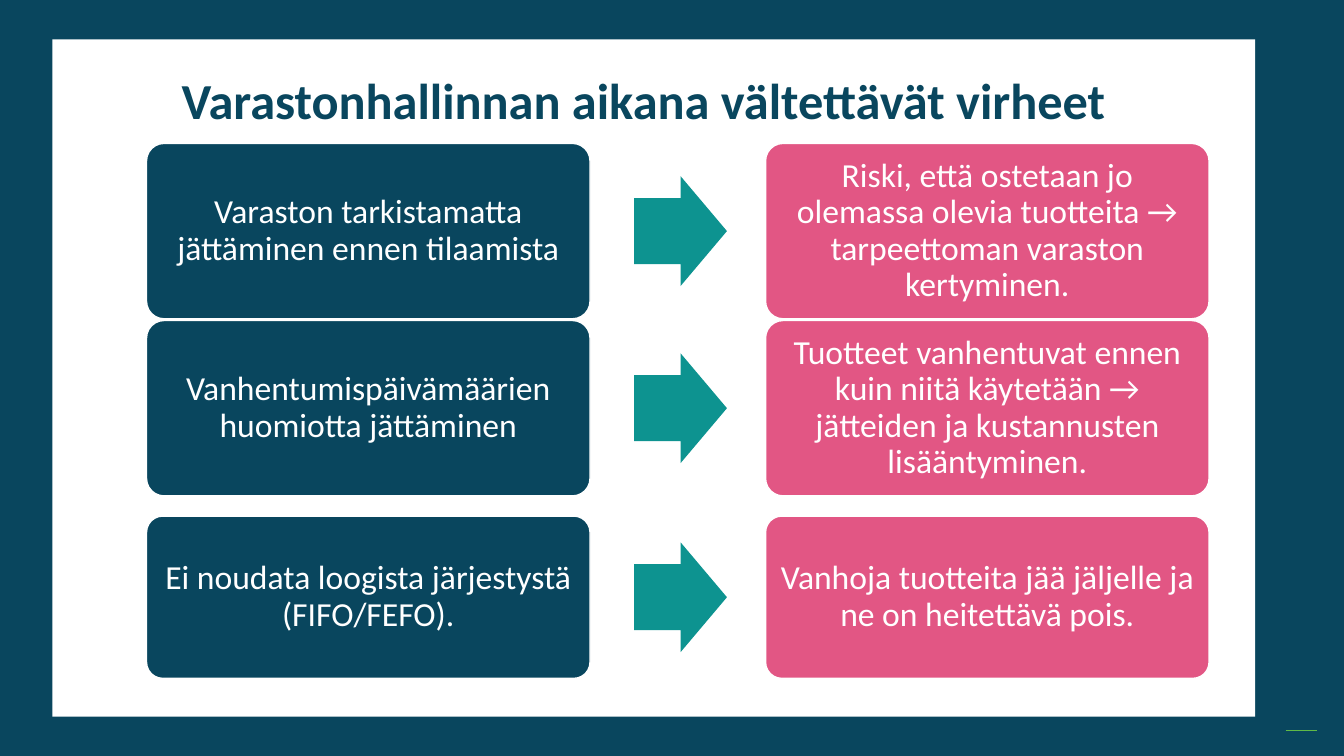
from dataclasses import dataclass

from lxml.etree import SubElement
from pptx import Presentation
from pptx.dml.color import RGBColor
from pptx.enum.shapes import MSO_CONNECTOR, MSO_SHAPE as Preset
from pptx.enum.text import MSO_ANCHOR as Anchor, PP_ALIGN as Align
from pptx.oxml.ns import qn
from pptx.shapes.autoshape import Shape
from pptx.slide import Slide
from pptx.text.text import TextFrame
from pptx.util import Inches, Length, Pt


@dataclass(frozen=True)
class Theme:
    navy: str = "09465E"
    pink: str = "E25684"
    teal: str = "0D9390"
    green: str = "60BA47"
    white: str = "FFFFFF"
    font: str = "Calibri"
    title_size: int = 36
    card_size: int = 24


@dataclass(frozen=True)
class Area:
    """A rectangle in percent of the slide's width and height."""
    left: float
    top: float
    width: float
    height: float

    def lengths(self) -> tuple[Length, Length, Length, Length]:
        return across(self.left), down(self.top), across(self.width), down(self.height)


@dataclass(frozen=True)
class MistakeRow:
    top: float
    height: float
    mistake: str
    consequence: str


THEME = Theme()
SLIDE_WIDTH, SLIDE_HEIGHT = Inches(13.33), Inches(7.5)
MISTAKE_LEFT, ARROW_LEFT, CONSEQUENCE_LEFT = 10.9, 47.19, 56.96
CARD_WIDTH, ARROW_WIDTH, ARROW_HEIGHT = 33, 6.9, 14.53

TITLE = "Varastonhallinnan aikana vältettävät virheet"
ROWS = (
    MistakeRow(18.97, 23.2, "Varaston tarkistamatta jättäminen ennen tilaamista",
               "Riski, että ostetaan jo olemassa olevia tuotteita → "
               "tarpeettoman varaston kertyminen."),
    MistakeRow(42.4, 23.2, "Vanhentumispäivämäärien huomiotta jättäminen",
               "Tuotteet vanhentuvat ennen kuin niitä käytetään → "
               "jätteiden ja kustannusten lisääntyminen."),
    MistakeRow(68.27, 21.47, "Ei noudata loogista järjestystä (FIFO/FEFO).",
               "Vanhoja tuotteita jää jäljelle ja ne on heitettävä pois."),
)


def across(percent: float) -> Length:
    return Length(round(SLIDE_WIDTH * percent / 100))


def down(percent: float) -> Length:
    return Length(round(SLIDE_HEIGHT * percent / 100))


def color(value: str) -> RGBColor:
    return RGBColor.from_string(value)


def add_block(slide: Slide, preset: Preset, area: Area, fill: str) -> Shape:
    """Add a filled preset shape without outline or shadow."""
    shape = slide.shapes.add_shape(preset, *area.lengths())
    shape.shadow.inherit = False
    shape.fill.solid()
    shape.fill.fore_color.rgb = color(fill)
    shape.line.fill.background()
    return shape


def write(frame: TextFrame, text: str, size: int, ink: str, bold: bool = False) -> None:
    frame.word_wrap = True
    paragraph = frame.paragraphs[0]
    paragraph.alignment = Align.CENTER
    paragraph.line_spacing = 0.9
    run = paragraph.add_run()
    run.text = text
    run.font.name = THEME.font
    run.font.size = Pt(size)
    run.font.bold = bold
    run.font.color.rgb = color(ink)


def add_card(slide: Slide, area: Area, fill: str, text: str) -> None:
    card = add_block(slide, Preset.ROUNDED_RECTANGLE, area, fill)
    card.adjustments[0] = 0.1
    card.line.color.rgb = color(THEME.white)
    card.line.width = Pt(1)
    frame = card.text_frame
    frame.vertical_anchor = Anchor.MIDDLE
    frame.margin_left = frame.margin_right = Inches(0.1)
    frame.margin_top = frame.margin_bottom = Inches(0.1)
    write(frame, text, THEME.card_size, THEME.white)


def add_row(slide: Slide, row: MistakeRow) -> None:
    add_card(slide, Area(MISTAKE_LEFT, row.top, CARD_WIDTH, row.height),
             THEME.navy, row.mistake)
    arrow_top = row.top + (row.height - ARROW_HEIGHT) / 2
    arrow = add_block(slide, Preset.RIGHT_ARROW,
                      Area(ARROW_LEFT, arrow_top, ARROW_WIDTH, ARROW_HEIGHT), THEME.teal)
    arrow.adjustments[0] = 0.6
    arrow.adjustments[1] = 0.5
    add_card(slide, Area(CONSEQUENCE_LEFT, row.top, CARD_WIDTH, row.height),
             THEME.pink, row.consequence)


def add_frame(slide: Slide) -> None:
    """Add the navy border, the white panel and the green corner line."""
    add_block(slide, Preset.RECTANGLE, Area(0, 0, 100, 100), THEME.navy)
    add_block(slide, Preset.RECTANGLE, Area(3.9, 5.2, 89.5, 89.6), THEME.white)
    corner_line = slide.shapes.add_connector(
        MSO_CONNECTOR.STRAIGHT, across(95.65), down(96.67), across(97.97), down(96.67))
    corner_line.line.color.rgb = color(THEME.green)
    corner_line.line.width = Pt(1)
    SubElement(corner_line.element.spPr, qn("a:effectLst"))


def main() -> None:
    presentation = Presentation()
    presentation.slide_width, presentation.slide_height = SLIDE_WIDTH, SLIDE_HEIGHT
    slide = presentation.slides.add_slide(presentation.slide_layouts[6])
    add_frame(slide)
    title = slide.shapes.add_textbox(*Area(6.68, 9.33, 82.45, 11.73).lengths())
    write(title.text_frame, TITLE, THEME.title_size, THEME.navy, bold=True)
    for row in ROWS:
        add_row(slide, row)
    presentation.save("out.pptx")


if __name__ == "__main__":
    main()
